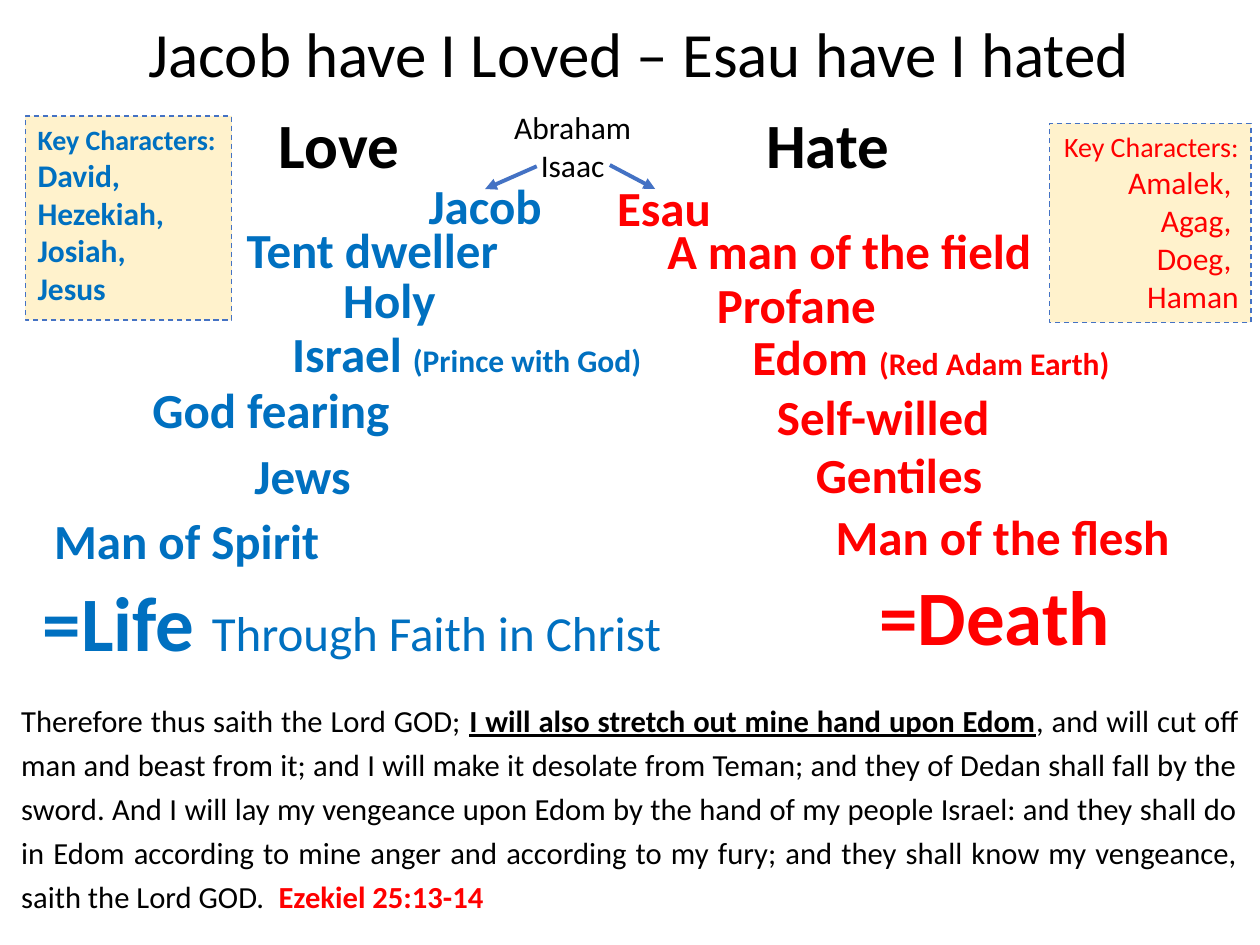
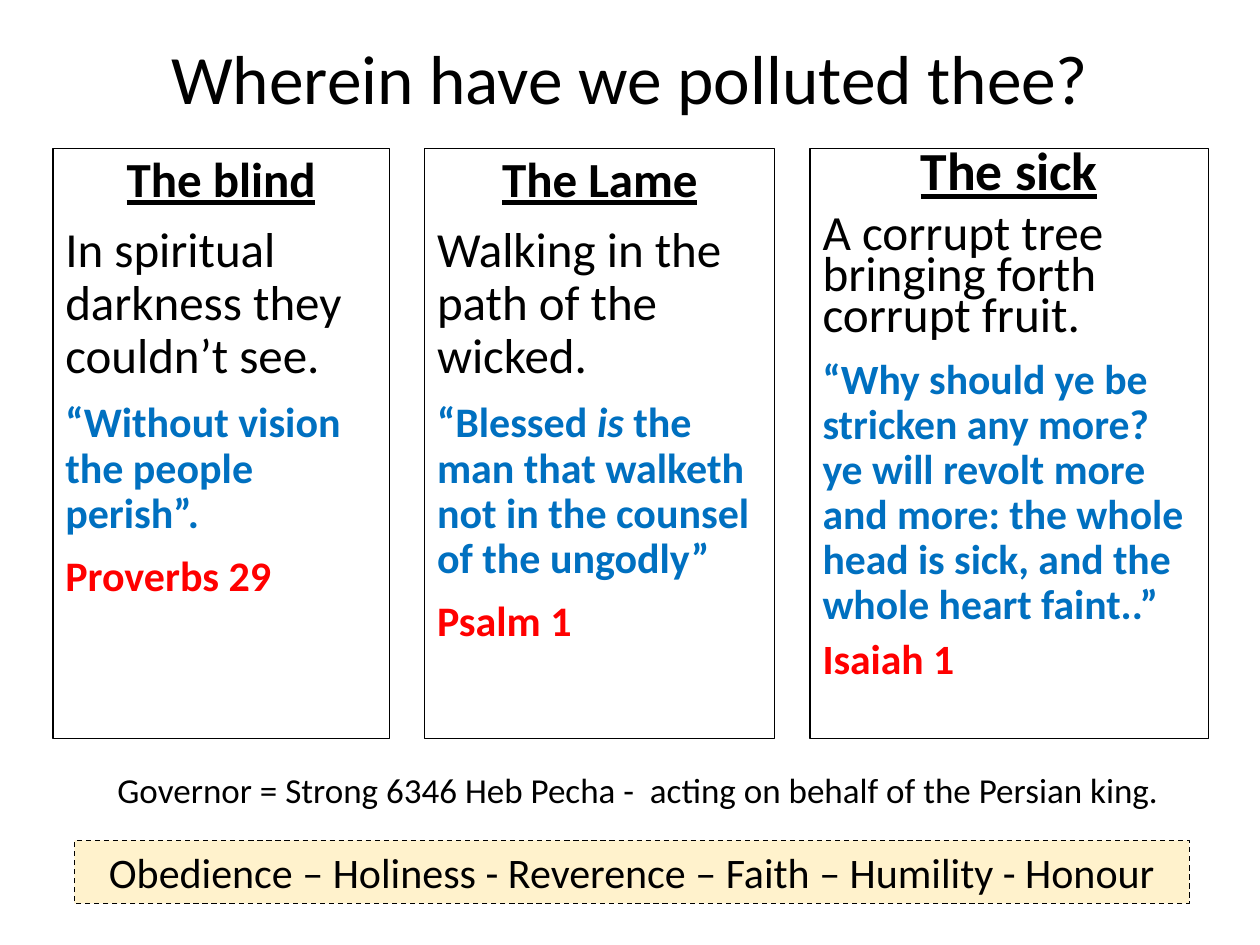
from dataclasses import dataclass

from lxml import etree
from pptx import Presentation
from pptx.dml.color import RGBColor
from pptx.enum.dml import MSO_LINE
from pptx.enum.shapes import MSO_CONNECTOR, MSO_SHAPE
from pptx.enum.text import MSO_ANCHOR, PP_ALIGN
from pptx.oxml.ns import qn
from pptx.util import Inches, Pt

LEFT, CENTER, RIGHT, JUSTIFY = PP_ALIGN.LEFT, PP_ALIGN.CENTER, PP_ALIGN.RIGHT, PP_ALIGN.JUSTIFY
TOP, MIDDLE = MSO_ANCHOR.TOP, MSO_ANCHOR.MIDDLE
DASH = MSO_LINE.DASH
RECTANGLE = MSO_SHAPE.RECTANGLE
STRAIGHT = MSO_CONNECTOR.STRAIGHT


@dataclass(frozen=True)
class Theme:
    font: str = "Calibri"
    black: str = "000000"
    blue: str = "0070C0"
    red: str = "FF0000"
    cream: str = "FFF2CC"
    accent: str = "4472C4"
    verdict: float = 44
    heading: float = 36
    trait: float = 28
    quote: float = 24
    governor: float = 20
    note: float = 18
    verse: float = 17.5
    label: float = 16


T = Theme()

# Slide 1: boxes are (left, top, width, height) in inches
LOVED_TITLE = ("Jacob have I Loved – Esau have I hated", 36, (0.76, 0.08, 8.62, 0.75))
HEADINGS = [("Love", 1.86), ("Hate", 5.74)]
FATHERS = ["Abraham", "Isaac"]
ARROWS = [((4.26, 1.32), (3.85, 1.5)), ((4.84, 1.31), (5.2, 1.5))]
# trait, explanation, left, top, width
JACOB_TRAITS = [
    ("Jacob", "", 3.09, 1.34, 1.52),
    ("Tent dweller", "", 1.82, 1.69, 2.27),
    ("Holy", "", 2.33, 2.09, 1.52),
    ("Israel ", "(Prince with God)", 2.21, 2.52, 2.99),
    ("God fearing", "", 1.03, 2.96, 2.24),
    ("Jews", "", 1.64, 3.49, 1.52),
    ("Man of Spirit ", "", 0.24, 4, 2.57),
]
ESAU_TRAITS = [
    ("Esau", "", 4.42, 1.36, 1.7),
    ("A man of the field", "", 4.71, 1.7, 4.06),
    ("Profane", "", 5.47, 2.13, 1.7),
    ("Edom ", "(Red Adam Earth)", 5.61, 2.54, 3.56),
    ("Self-willed", "", 5.76, 3.02, 2.5),
    ("Gentiles", "", 6.21, 3.48, 1.85),
    ("Man of the flesh ", "", 6.42, 3.97, 3.16),
]
KEY_LABEL = "Key Characters:"
# names, colour, flags, alignment, box
KEY_CHARACTERS = [
    (["David,", "Hezekiah,", "Josiah,", "Jesus"], T.blue, "b", LEFT, (0.2, 0.92, 1.64, 1.62)),
    (["Amalek, ", "Agag, ", "Doeg, ", "Haman"], T.red, "", RIGHT, (8.33, 0.98, 1.6, 1.58)),
]
VERDICTS = [
    ("=Life ", "Through Faith in Christ", T.blue, (0.24, 4.51, 6.18, 0.84)),
    ("=Death", "", T.red, (6.88, 4.46, 2.09, 0.84)),
]
EZEKIEL = [
    ("Therefore thus saith the Lord GOD; ", T.verse, T.black, ""),
    ("I will also stretch out mine hand upon Edom", T.verse, T.black, "bu"),
    (", and will cut off man and beast from it; and I will make it desolate from Teman; "
     "and they of Dedan shall fall by the sword. And I will lay my vengeance upon Edom by "
     "the hand of my people Israel: and they shall do in Edom according to mine anger and "
     "according to my fury; and they shall know my vengeance, saith the Lord GOD.  ",
     T.verse, T.black, ""),
    ("Ezekiel 25:13-14", T.verse, T.red, "b"),
]

# Slide 2
POLLUTED_TITLE = ("Wherein have we polluted thee?", 39.6, (0.69, 0.31, 8.62, 0.69))
CARD_TOP, CARD_HEIGHT = 1.18, 4.68
STANDARD_SIZES = (T.trait, T.trait, T.quote)
# heading, charge, quote as (text, flags), reference, left, width, sizes, line spacing
OFFERINGS = [
    ("The blind", "In spiritual darkness they couldn’t see.",
     [("“Without vision the people perish”.", "b")],
     "Proverbs 29", 0.42, 2.67, STANDARD_SIZES, 0.9),
    ("The Lame", "Walking in the path of the wicked.",
     [("“Blessed ", "b"), ("is", "bi"),
      (" the man that walketh not in the counsel of the ungodly”", "b")],
     "Psalm 1", 3.37, 2.78, STANDARD_SIZES, 0.9),
    ("The sick", "A corrupt tree bringing forth corrupt fruit.",
     [("“Why should ye be stricken any more? ye will revolt more and more: "
       "the whole head is sick, and the whole heart faint..”", "b")],
     "Isaiah 1", 6.43, 3.16, (30.6, 28.1, 23.8), 0.7),
]
GOVERNOR = "Governor = Strong 6346 Heb Pecha -  acting on behalf of the Persian king."
VIRTUES = "Obedience – Holiness - Reverence – Faith – Humility - Honour"


def rgb(code):
    return RGBColor.from_string(code)


def inches(box):
    return [Inches(length) for length in box]


def add_paragraph(frame, runs, align=LEFT, spacing=None, before=None, after=None):
    """Fill the frame's empty first paragraph, or append; runs are (text, size, colour, flags)."""
    paragraph = frame.paragraphs[0]
    if paragraph.runs:
        paragraph = frame.add_paragraph()
    paragraph.alignment = align
    if spacing is not None:
        paragraph.line_spacing = spacing
    if before is not None:
        paragraph.space_before = Pt(before)
    if after is not None:
        paragraph.space_after = Pt(after)
    for text, size, color, flags in runs:
        run = paragraph.add_run()
        run.text = text
        run.font.name = T.font
        run.font.size = Pt(size)
        run.font.color.rgb = rgb(color)
        run.font.bold = "b" in flags
        run.font.italic = "i" in flags
        run.font.underline = "u" in flags


def add_text(slide, box, runs, align=CENTER, **spacing):
    frame = slide.shapes.add_textbox(*inches(box)).text_frame
    frame.word_wrap = True
    add_paragraph(frame, runs, align, **spacing)
    return frame


def add_panel(slide, box, line, fill=None, dash=None):
    """Add an outlined rectangle and return its text frame."""
    panel = slide.shapes.add_shape(RECTANGLE, *inches(box))
    panel.shadow.inherit = False
    if fill:
        panel.fill.solid()
        panel.fill.fore_color.rgb = rgb(fill)
    else:
        panel.fill.background()
    panel.line.color.rgb = rgb(line)
    panel.line.width = Pt(0.75)
    if dash:
        panel.line.dash_style = dash
    frame = panel.text_frame
    frame.word_wrap = True
    frame.vertical_anchor = TOP
    return frame


def add_arrow(slide, start, end):
    arrow = slide.shapes.add_connector(STRAIGHT, *inches(start + end))
    arrow.line.color.rgb = rgb(T.accent)
    arrow.line.width = Pt(2.25)
    etree.SubElement(arrow.line._get_or_add_ln(), qn("a:tailEnd"), type="triangle")
    etree.SubElement(arrow._element.spPr, qn("a:effectLst"))


def add_titled_slide(deck, text, size, box):
    slide = deck.slides.add_slide(deck.slide_layouts[5])
    title = slide.shapes.title
    title.left, title.top, title.width, title.height = inches(box)
    title.text_frame.vertical_anchor = MIDDLE
    add_paragraph(title.text_frame, [(text, size, T.black, "")], CENTER, spacing=0.9)
    return slide


def build_loved_and_hated(deck):
    slide = add_titled_slide(deck, *LOVED_TITLE)
    for heading, left in HEADINGS:
        add_text(slide, (left, 0.79, 1.66, 0.71), [(heading, T.heading, T.black, "b")])

    abraham, isaac = [[(father, T.note, T.black, "")] for father in FATHERS]
    lineage = add_text(slide, (3.89, 0.81, 1.31, 0.71), abraham)
    add_paragraph(lineage, isaac, CENTER)
    for start, end in ARROWS:
        add_arrow(slide, start, end)

    for traits, color in ((JACOB_TRAITS, T.blue), (ESAU_TRAITS, T.red)):
        for trait, meaning, left, top, width in traits:
            runs = [(trait, T.trait, color, "b")]
            if meaning:
                runs.append((meaning, T.note, color, "b"))
            add_text(slide, (left, top, width, 0.57), runs)

    for names, color, flags, align, box in KEY_CHARACTERS:
        characters = add_panel(slide, box, T.accent, T.cream, DASH)
        add_paragraph(characters, [(KEY_LABEL, T.label, color, flags)], align)
        for name in names:
            add_paragraph(characters, [(name, T.note, color, flags)], align)

    for verdict, means, color, box in VERDICTS:
        runs = [(verdict, T.verdict, color, "b")]
        if means:
            runs.append((means, T.trait, color, ""))
        add_text(slide, box, runs, LEFT)

    add_text(slide, (0.07, 5.46, 9.86, 2.03), EZEKIEL, JUSTIFY, spacing=1.2, before=10, after=6)


def build_polluted(deck):
    slide = add_titled_slide(deck, *POLLUTED_TITLE)
    for heading, charge, quote, reference, left, width, sizes, spacing in OFFERINGS:
        heading_size, charge_size, quote_size = sizes
        card = add_panel(slide, (left, CARD_TOP, width, CARD_HEIGHT), T.black)
        quote_runs = [(text, quote_size, T.blue, flags) for text, flags in quote]
        add_paragraph(card, [(heading, heading_size, T.black, "bu")], CENTER, spacing, 10)
        add_paragraph(card, [(charge, charge_size, T.black, "")], LEFT, spacing, 10)
        add_paragraph(card, quote_runs, LEFT, 0.9, 10)
        add_paragraph(card, [(reference, quote_size, T.red, "b")], LEFT, spacing, 10)

    add_text(slide, (0.69, 6.05, 8.75, 0.44), [(GOVERNOR, T.governor, T.black, "")])
    virtues = add_panel(slide, (0.59, 6.67, 8.85, 0.5), T.black, T.cream, DASH)
    add_paragraph(virtues, [(VIRTUES, T.quote, T.black, "")], CENTER)


def main():
    deck = Presentation()
    deck.slide_width, deck.slide_height = Inches(10), Inches(7.5)
    build_loved_and_hated(deck)
    build_polluted(deck)
    deck.save("out.pptx")


if __name__ == "__main__":
    main()
